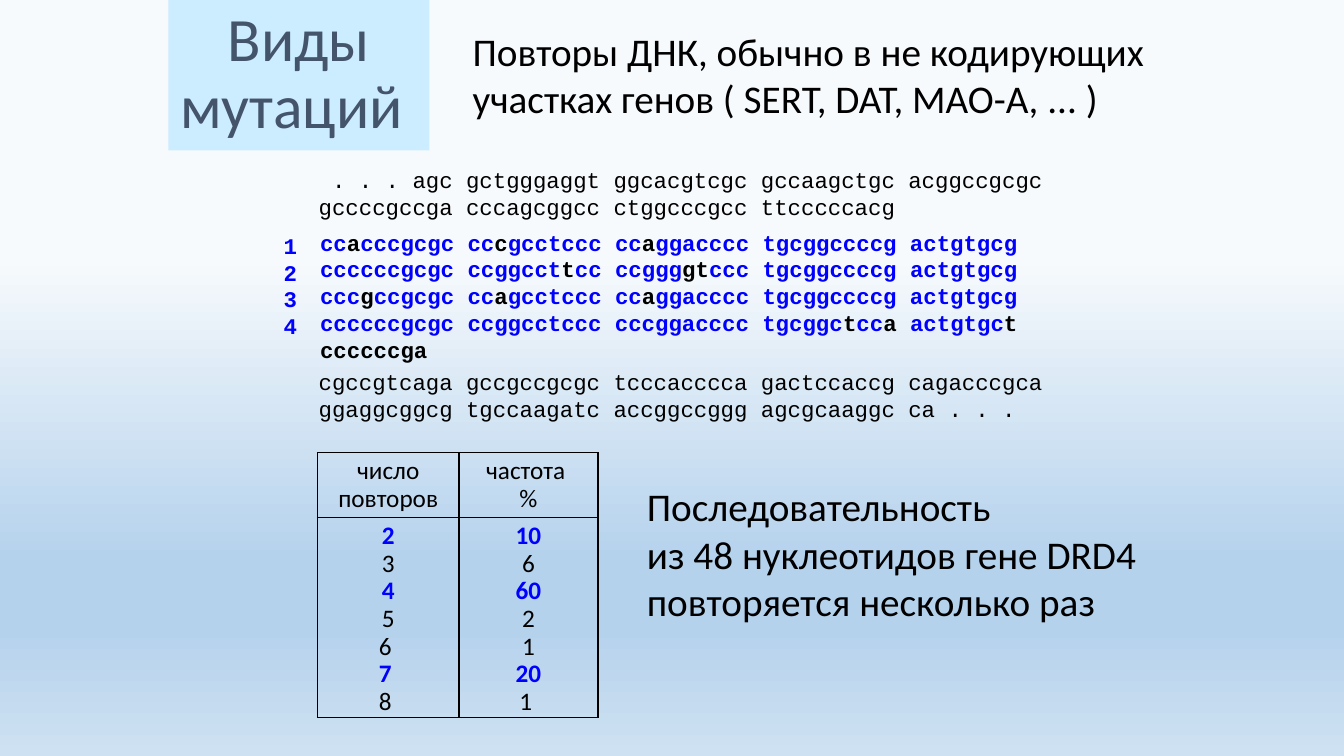
from lxml import etree
from pptx import Presentation
from pptx.dml.color import RGBColor
from pptx.enum.text import MSO_ANCHOR, PP_ALIGN
from pptx.oxml import parse_xml
from pptx.oxml.ns import qn
from pptx.util import Pt

CENTER = PP_ALIGN.CENTER
LEFT = PP_ALIGN.LEFT
MIDDLE = MSO_ANCHOR.MIDDLE
DRAWING_NS = "http://schemas.openxmlformats.org/drawingml/2006/main"

BLACK, BLUE = "000000", "0000FF"
SANS, MONO = "Calibri", "Courier New"
SKY_STOPS = [(34, "F7FAFD"), (74, "B5D2EC"), (83, "B5D2EC"), (100, "CEE1F2")]

LEADING_SEQUENCE = [
    " . . . agc gctgggaggt ggcacgtcgc gccaagctgc acggccgcgc",
    "gccccgccga cccagcggcc ctggcccgcc ttcccccacg",
]
REPEATS = [
    "cc|a|cccgcgc cc|c|gcctccc cc|a|ggacccc tgcggccccg actgtgcg",
    "ccccccgcgc ccggcct|t|cc ccggg|gt|ccc tgcggccccg actgtgcg",
    "ccc|g|ccgcgc cc|a|gcctccc cc|a|ggacccc tgcggccccg actgtgcg",
    "ccccccgcgc ccggcctccc cccggacccc tgcggc|t|cc|a |actgtgc|t",
    "|ccccccga",
]
TRAILING_SEQUENCE = [
    "cgccgtcaga gccgccgcgc tcccacccca gactccaccg cagacccgca",
    "ggaggcggcg tgccaagatc accggccggg agcgcaaggc ca . . .",
]
FREQUENCIES = [
    (["число", "повторов"], ["частота ", "%"]),
    (["2", "3", "4", "5", "6 ", "7 ", "8 "],
     ["10", "6", "60", "2", "1", "20", "1 "]),
]
COMMON_REPEATS = (0, 2, 5)


def rgb(value):
    return RGBColor.from_string(value)


def style(font, name, size, color, bold=False):
    font.name = name
    font.size = Pt(size)
    font.color.rgb = rgb(color)
    font.bold = bold


def paragraphs(frame, count):
    return [frame.paragraphs[0]] + [frame.add_paragraph() for _ in range(count - 1)]


def text_frame(shapes, box):
    frame = shapes.add_textbox(*map(Pt, box)).text_frame
    frame.word_wrap = True
    return frame


def paint_background(slide):
    fill = slide.background.fill
    fill.gradient()
    gradient = slide.background._cSld.bg.bgPr.find(qn("a:gradFill"))
    stops = gradient.find(qn("a:gsLst"))
    for stop in list(stops):
        stops.remove(stop)
    for position, color in SKY_STOPS:
        stop = etree.SubElement(stops, qn("a:gs"), pos=str(position * 1000))
        etree.SubElement(stop, qn("a:srgbClr"), val=color)
    gradient.find(qn("a:lin")).set("ang", "5400000")


def place_title(slide, box):
    title = slide.shapes.title
    title.left, title.top, title.width, title.height = map(Pt, box)
    title.fill.solid()
    title.fill.fore_color.rgb = rgb("CCECFF")
    title.text_frame.vertical_anchor = MIDDLE
    heading = title.text_frame.paragraphs[0]
    heading.text = "Виды мутаций "
    heading.alignment = CENTER
    heading.line_spacing = 0.9
    style(heading.font, SANS, 44, "44546A")


def add_statement(slide, box, wording):
    statement = text_frame(slide.shapes, box).paragraphs[0]
    statement.text = wording
    statement.alignment = LEFT
    style(statement.font, SANS, 28, BLACK)


def add_lines(shapes, box, lines, color, bold):
    frame = text_frame(shapes, box)
    for line, paragraph in zip(lines, paragraphs(frame, len(lines))):
        paragraph.line_spacing = Pt(19.2)
        style(paragraph.font, MONO, 16, color, bold)
        for index, bases in enumerate(line.split("|")):
            if bases:
                run = paragraph.add_run()
                run.text = bases
                style(run.font, MONO, 16, BLACK if index % 2 else color, bold)


def add_sequence(slide, box):
    left, top, width, height = box
    shapes = slide.shapes.add_group_shape().shapes
    add_lines(shapes, (left, top, width, 46), LEADING_SEQUENCE, BLACK, False)
    add_lines(shapes, (left + 1, top + 44.6, width, 104), REPEATS, BLUE, True)
    add_lines(shapes, (left, top + height - 46, width, 46), TRAILING_SEQUENCE, BLACK, False)
    add_lines(shapes, (left - 25, top + 46.8, 26, 84), "1234", BLUE, True)


def add_borders(cell):
    properties = cell._tc.get_or_add_tcPr()
    for index, side in enumerate(("lnL", "lnR", "lnT", "lnB")):
        border = parse_xml(
            f'<a:{side} xmlns:a="{DRAWING_NS}" w="12700"><a:solidFill>'
            f'<a:srgbClr val="{BLACK}"/></a:solidFill></a:{side}>')
        properties.insert(index, border)


def add_frequency_table(slide, box):
    table = slide.shapes.add_table(2, 2, *map(Pt, box)).table
    table.first_row = table.horz_banding = False
    for column, width in zip(table.columns, (101, 99.4)):
        column.width = Pt(width)
    for row, height in zip(table.rows, (46, 143.4)):
        row.height = Pt(height)
    for row_index, row in enumerate(FREQUENCIES):
        for column_index, lines in enumerate(row):
            cell = table.cell(row_index, column_index)
            cell.fill.background()
            add_borders(cell)
            for index, paragraph in enumerate(paragraphs(cell.text_frame, len(lines))):
                common = row_index == 1 and index in COMMON_REPEATS
                paragraph.text = lines[index]
                paragraph.alignment = CENTER
                paragraph.line_spacing = 0.9
                indents = paragraph._p.get_or_add_pPr()
                indents.set("marL", str(Pt(27)))
                indents.set("indent", str(Pt(-27)))
                style(paragraph.font, SANS, 18, BLUE if common else BLACK, common)


def main():
    presentation = Presentation()
    presentation.slide_width, presentation.slide_height = Pt(960), Pt(540)
    slide = presentation.slides.add_slide(presentation.slide_layouts[5])
    paint_background(slide)
    place_title(slide, (120.2, 0, 186.5, 107.5))
    add_statement(slide, (330.5, 15.8, 497.5, 74.2),
                  "Повторы ДНК, обычно в не кодирующих участках генов ( SERT, DAT, MAO-A, ... )")
    add_sequence(slide, (220.6, 115.2, 554, 190))
    add_frequency_table(slide, (226.8, 323.3, 200.4, 189.4))
    add_statement(slide, (455, 341.3, 373.7, 108),
                  "Последовательность \nиз 48 нуклеотидов гене DRD4 повторяется несколько раз")
    presentation.save("out.pptx")


if __name__ == "__main__":
    main()
